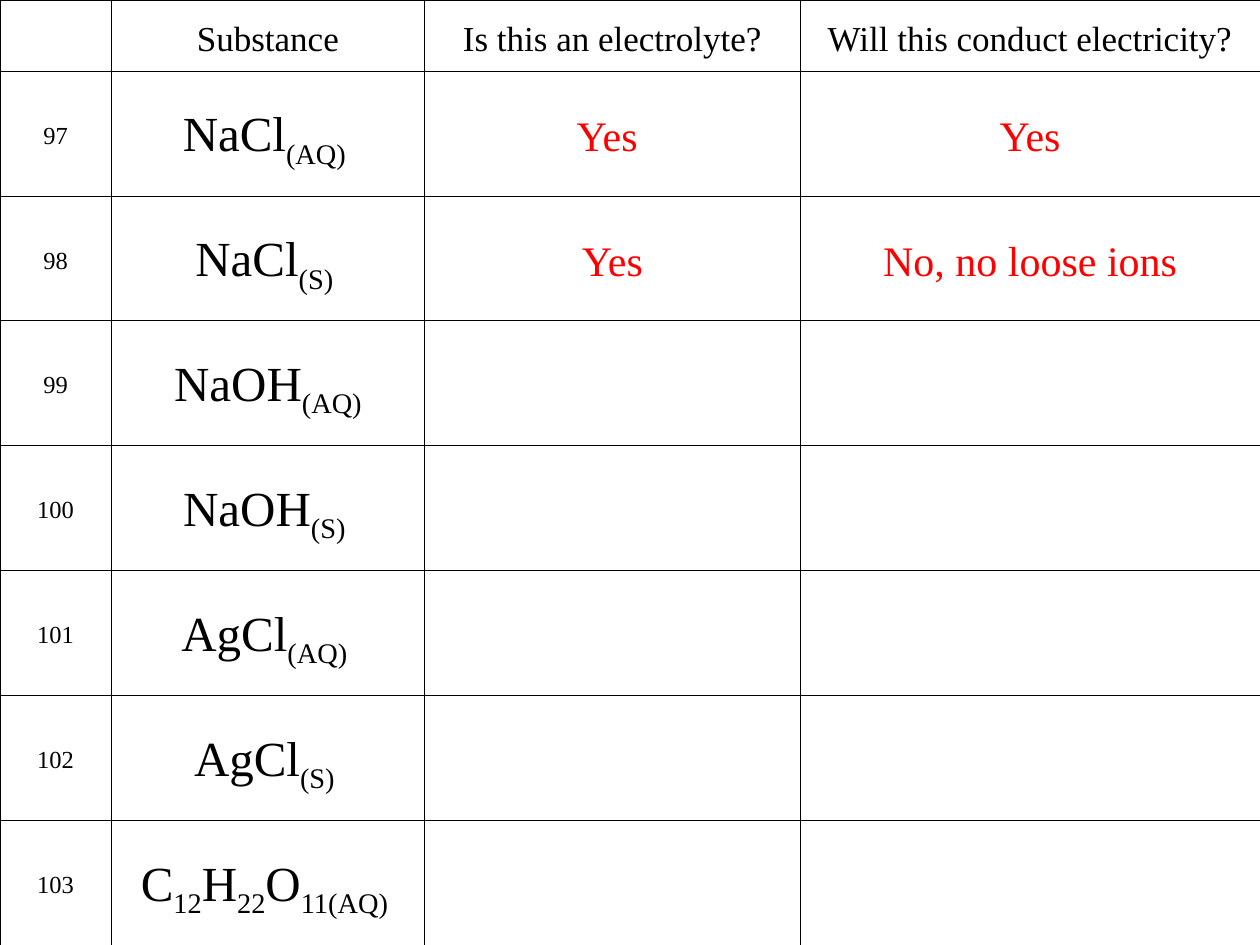
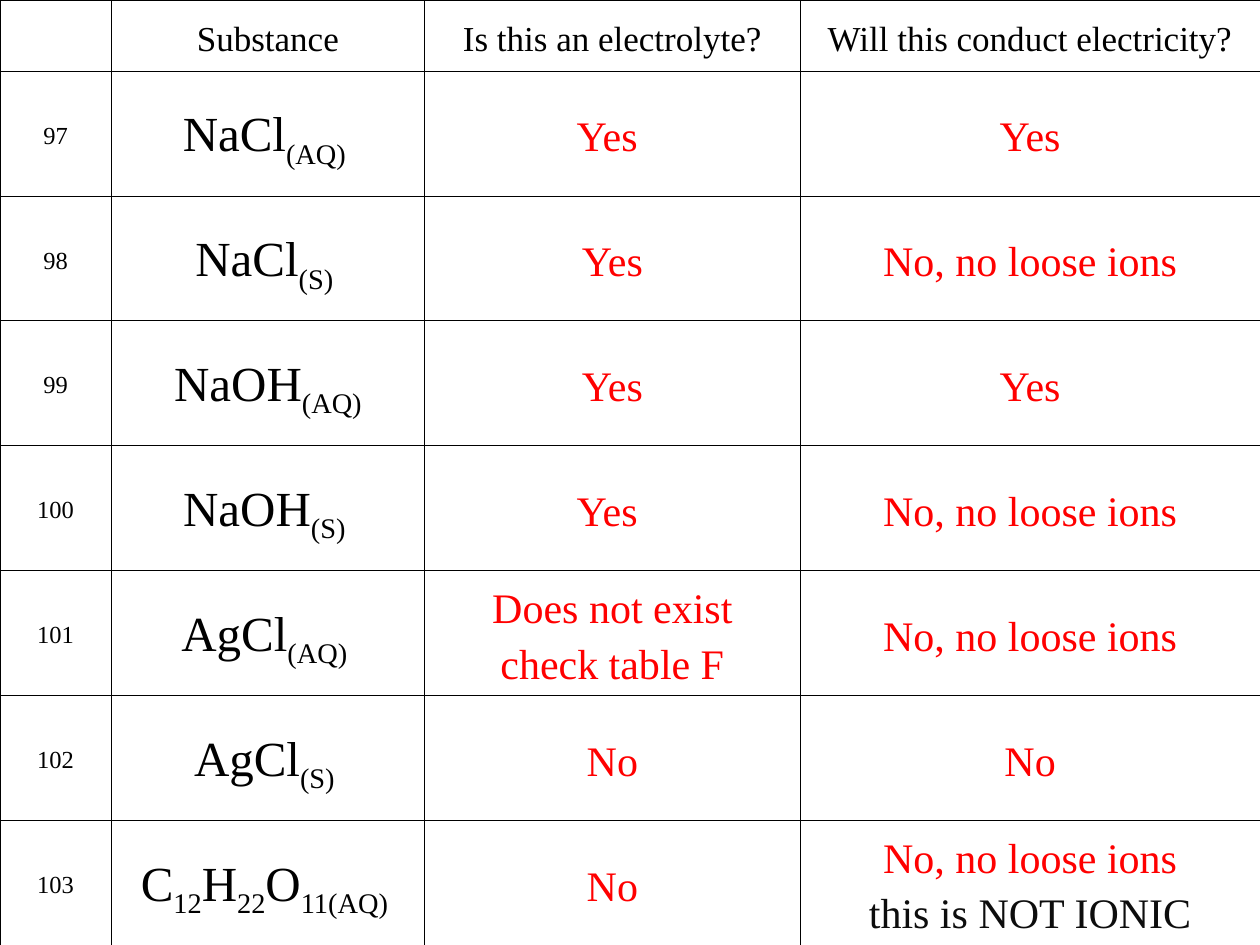
from lxml import etree
from pptx import Presentation
from pptx.dml.color import RGBColor
from pptx.enum import text
from pptx.oxml import ns
from pptx.util import Cm, Pt

BLACK = RGBColor(0x00, 0x00, 0x00)
RED = RGBColor(0xFF, 0x00, 0x00)
NEAR_BLACK = RGBColor(0x0D, 0x0D, 0x0D)

FONT = "Times New Roman"
PAGE_WIDTH, PAGE_HEIGHT = Cm(25.4), Cm(19.05)
COLUMN_WIDTHS = [Cm(2.24), Cm(6.32), Cm(7.57), Cm(9.27)]
HEADER_HEIGHT = Cm(1.43)
CELL_MARGIN = Cm(0.1)

HEADER = {"size": Pt(20), "color": BLACK}
NUMBER = {"size": Pt(14), "color": BLACK}
FORMULA = {"size": Pt(28), "color": BLACK}
ANSWER = {"size": Pt(24), "color": RED}
REMARK = {"size": Pt(24), "color": NEAR_BLACK}

CELL_FORMAT = {
    "vertical_anchor": text.MSO_ANCHOR.MIDDLE,
    "margin_left": CELL_MARGIN,
    "margin_right": CELL_MARGIN,
    "margin_top": CELL_MARGIN,
    "margin_bottom": CELL_MARGIN,
}
PARA_FORMAT = {
    "alignment": text.PP_ALIGN.CENTER,
    "line_spacing": 1.19,
    "space_after": Pt(6),
}

HEADINGS = ["Substance", "Is this an electrolyte?", "Will this conduct electricity?"]
FIRST_NUMBER = 97
NO_IONS = "No, no loose ions"
# In a substance, every second part between bars is a subscript.
QUESTIONS = [
    ("NaCl|(AQ) ", "Yes ", "Yes"),
    ("NaCl|(S) ", "Yes", NO_IONS),
    ("NaOH|(AQ)", "Yes", "Yes"),
    ("NaOH|(S) ", "Yes ", NO_IONS),
    ("AgCl|(AQ) ", "Does not exist\ncheck table F", NO_IONS),
    ("AgCl|(S) ", "No", "No"),
    ("C|12|H|22|O|11(AQ) ", "No", NO_IONS),
]
LAST_REMARK = "this is NOT IONIC"
ANSWERS_SHOWN = [2, len(QUESTIONS)]


def apply_format(target, values):
    for name, value in values.items():
        setattr(target, name, value)


def add_span(para, words, style, subscript=False):
    span = para.add_run()
    span.text = words
    span.font.name = FONT
    span.font.size = style["size"]
    span.font.color.rgb = style["color"]
    if subscript:
        span._r.get_or_add_rPr().set("baseline", "-25000")


def start_para(cell):
    para = cell.text_frame.paragraphs[0]
    apply_format(para, PARA_FORMAT)
    return para


def write_lines(cell, lines):
    """Write (words, style) pairs into one paragraph, a line each."""
    para = start_para(cell)
    for index, (words, style) in enumerate(lines):
        if index:
            para.add_line_break()
        add_span(para, words, style)


def write_formula(cell, formula):
    para = start_para(cell)
    for index, part in enumerate(formula.split("|")):
        add_span(para, part, FORMULA, subscript=index % 2 == 1)


def write_answer(cell, answer, remark=None):
    lines = [(line, ANSWER) for line in answer.split("\n")]
    if remark:
        lines.append((remark, REMARK))
    write_lines(cell, lines)


def add_borders(cell):
    properties = cell._tc.get_or_add_tcPr()
    for index, side in enumerate(("lnL", "lnR", "lnT", "lnB")):
        line = etree.Element(ns.qn(f"a:{side}"), w=str(Pt(0.25)))
        fill = etree.SubElement(line, ns.qn("a:solidFill"))
        etree.SubElement(fill, ns.qn("a:srgbClr"), val=str(BLACK))
        properties.insert(index, line)


def add_grid(page):
    """Add the plain ruled table that fills the page."""
    row_count = len(QUESTIONS) + 1
    table = page.shapes.add_table(
        row_count, len(COLUMN_WIDTHS), 0, 0, PAGE_WIDTH, PAGE_HEIGHT
    ).table
    apply_format(table, {"first_row": False, "horz_banding": False})
    for column, width in zip(table.columns, COLUMN_WIDTHS):
        column.width = width
    for index, row in enumerate(table.rows):
        question_height = (PAGE_HEIGHT - HEADER_HEIGHT) // len(QUESTIONS)
        row.height = question_height if index else HEADER_HEIGHT
    for cell in table.iter_cells():
        apply_format(cell, CELL_FORMAT)
        cell.fill.background()
        add_borders(cell)
    return table


def add_question_page(deck, answers_shown):
    page = deck.slides.add_slide(deck.slide_layouts[6])
    table = add_grid(page)
    for column, heading in enumerate(HEADINGS, start=1):
        write_lines(table.cell(0, column), [(heading, HEADER)])
    for row, (formula, electrolyte, conducts) in enumerate(QUESTIONS, start=1):
        number = str(FIRST_NUMBER + row - 1)
        write_lines(table.cell(row, 0), [(number, NUMBER)])
        write_formula(table.cell(row, 1), formula)
        if row <= answers_shown:
            remark = LAST_REMARK if row == len(QUESTIONS) else None
            write_answer(table.cell(row, 2), electrolyte)
            write_answer(table.cell(row, 3), conducts, remark)


def main():
    deck = Presentation()
    apply_format(deck, {"slide_width": PAGE_WIDTH, "slide_height": PAGE_HEIGHT})
    for answers_shown in ANSWERS_SHOWN:
        add_question_page(deck, answers_shown)
    deck.save("out.pptx")


if __name__ == "__main__":
    main()
